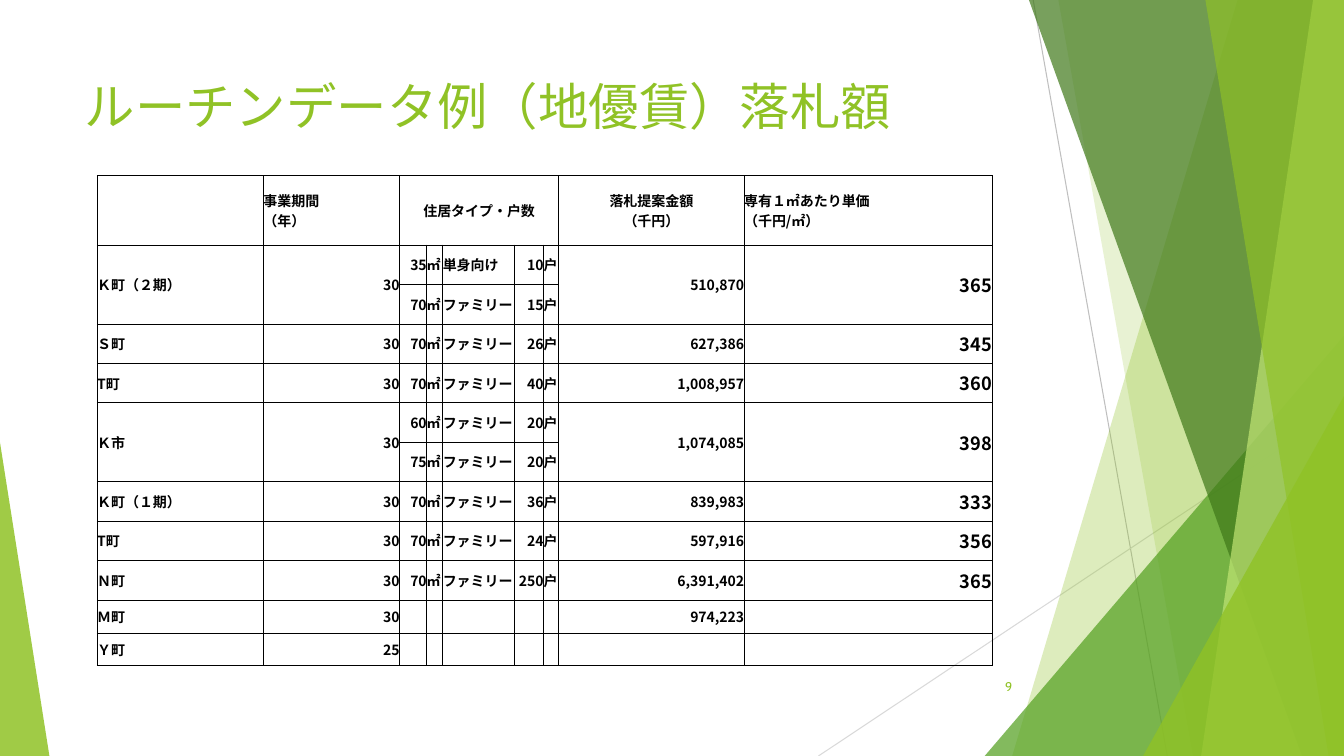
from dataclasses import dataclass

from lxml.etree import SubElement
from pptx import Presentation
from pptx.dml.color import RGBColor
from pptx.enum.shapes import MSO_CONNECTOR, MSO_SHAPE
from pptx.enum.text import MSO_ANCHOR, MSO_AUTO_SIZE, PP_ALIGN
from pptx.oxml.ns import qn
from pptx.util import Pt

W, H = 960, 540
GREEN = "90C226"
BLACK = "000000"
LATIN, CJK = "Cabin", "Noto Sans CJK JP"
LEFT, CENTER, RIGHT = PP_ALIGN.LEFT, PP_ALIGN.CENTER, PP_ALIGN.RIGHT


@dataclass
class Ray:
    x1: float
    y1: float
    x2: float
    y2: float
    color: str


@dataclass
class Band:
    top_x: float
    bottom_x: float
    color: str
    alpha: int


@dataclass
class Corner:
    x: float
    y: float
    width: float
    apex: float
    color: str
    alpha: int


@dataclass
class Units:
    area: str = ""
    kind: str = ""
    count: str = ""

    def texts(self) -> list[str]:
        if not self.area:
            return [""] * 5
        return [self.area, "㎡", self.kind, self.count, "戸"]


@dataclass
class Project:
    town: str
    years: str
    units: list[Units]
    price: str = ""
    rate: str = ""


RAYS = [Ray(738, 0, 833.8, H, "BFBFBF"), Ray(W, 290.2, 584.6, H, "D9D9D9")]
DECOR = [
    Band(884.2, 722.9, GREEN, 30),
    Band(756, 851.8, GREEN, 20),
    Corner(703.4, 239.8, 256.6, 1, "54A021", 72),
    Band(735.1, 929.5, "3F7819", 70),
    Band(938.2, 858.2, "C0E474", 70),
    Band(861.1, 949, GREEN, 65),
    Corner(816.5, 283, 143.5, 1, GREEN, 80),
    Corner(0, 316.1, 35.3, 0, GREEN, 85),
]
FAMILY = "ファミリー"
PROJECTS = [
    Project("Ｋ町（２期）", "30", [Units("35", "単身向け", "10"), Units("70", FAMILY, "15")],
            "510,870", "365"),
    Project("Ｓ町", "30", [Units("70", FAMILY, "26")], "627,386", "345"),
    Project("T町", "30", [Units("70", FAMILY, "40")], "1,008,957", "360"),
    Project("Ｋ市", "30", [Units("60", FAMILY, "20"), Units("75", FAMILY, "20")],
            "1,074,085", "398"),
    Project("Ｋ町（１期）", "30", [Units("70", FAMILY, "36")], "839,983", "333"),
    Project("T町", "30", [Units("70", FAMILY, "24")], "597,916", "356"),
    Project("Ｎ町", "30", [Units("70", FAMILY, "250")], "6,391,402", "365"),
    Project("Ｍ町", "30", [Units()], "974,223"),
    Project("Ｙ町", "25", [Units()]),
]
HEADERS = {
    1: ("事業期間\n（年）", LEFT),
    2: ("住居タイプ・戸数", CENTER),
    7: ("落札提案金額\n（千円）", CENTER),
    8: ("専有１㎡あたり単価\n（千円/㎡）", LEFT),
}
COLS = [118.8, 97.2, 19.4, 11.5, 51.1, 20.9, 10.8, 132.5, 177.1]
ROWS = [49.7] + [28.2] * 9 + [23.5] * 2
ALIGNS = [LEFT, RIGHT, RIGHT, LEFT, LEFT, RIGHT, LEFT, RIGHT, RIGHT]
RATE_COL = 8


def rgb(color: str) -> RGBColor:
    return RGBColor.from_string(color)


def write(p, text: str, size: float, color: str, name: str, align=LEFT, bold=False) -> None:
    p.text = text
    p.alignment = align
    f = p.font
    f.size, f.bold, f.name = Pt(size), bold, name
    f.color.rgb = rgb(color)
    SubElement(f._rPr, qn("a:ea"), typeface=CJK)
    if not text:
        SubElement(p._p, qn("a:endParaRPr"), sz=str(int(size * 100)))


def paint(sp, color: str, alpha: int) -> None:
    sp.shadow.inherit = False
    sp.line.fill.background()
    sp.fill.solid()
    sp.fill.fore_color.rgb = rgb(color)
    clr = sp.fill._xPr.find(qn("a:solidFill"))[0]
    SubElement(clr, qn("a:alpha"), val=str(alpha * 1000))


def draw_ray(s, ray: Ray) -> None:
    sp = s.shapes.add_connector(MSO_CONNECTOR.STRAIGHT,
                                Pt(ray.x1), Pt(ray.y1), Pt(ray.x2), Pt(ray.y2))
    sp.line.color.rgb = rgb(ray.color)
    sp.line.width = Pt(0.75)
    SubElement(sp._element.spPr, qn("a:effectLst"))


def draw_band(s, band: Band) -> None:
    fb = s.shapes.build_freeform(band.top_x, 0, scale=Pt(1))
    fb.add_line_segments([(W, 0), (W, H), (band.bottom_x, H)], close=True)
    paint(fb.convert_to_shape(), band.color, band.alpha)


def draw_corner(s, c: Corner) -> None:
    sp = s.shapes.add_shape(MSO_SHAPE.ISOSCELES_TRIANGLE,
                            Pt(c.x), Pt(c.y), Pt(c.width), Pt(H - c.y))
    sp.adjustments[0] = c.apex
    paint(sp, c.color, c.alpha)


def format_cell(cell, text: str, align, size: float) -> None:
    cell.margin_left = cell.margin_right = cell.margin_top = cell.margin_bottom = 0
    cell.vertical_anchor = MSO_ANCHOR.MIDDLE
    tcPr = cell._tc.get_or_add_tcPr()
    for side in ("lnL", "lnR", "lnT", "lnB"):
        ln = SubElement(tcPr, qn(f"a:{side}"), w=str(Pt(0.5)))
        SubElement(SubElement(ln, qn("a:solidFill")), qn("a:srgbClr"), val=BLACK)
    cell.fill.background()
    write(cell.text_frame.paragraphs[0], text, size, BLACK, CJK, align, True)


def draw_table(s) -> None:
    table = s.shapes.add_table(len(ROWS), len(COLS), Pt(69.4), Pt(125.3),
                               Pt(sum(COLS)), Pt(sum(ROWS))).table
    table.first_row = table.horz_banding = False
    for col, width in zip(table.columns, COLS):
        col.width = Pt(width)
    for row, height in zip(table.rows, ROWS):
        row.height = Pt(height)
    for i in range(len(COLS)):
        format_cell(table.cell(0, i), *HEADERS.get(i, ("", LEFT)), 10)
    table.cell(0, 2).merge(table.cell(0, 6))
    top = 1
    for project in PROJECTS:
        bottom = top + len(project.units) - 1
        for k, units in enumerate(project.units):
            texts = [project.town, project.years, *units.texts(), project.price, project.rate]
            for i, text in enumerate(texts):
                spanned = k > 0 and i in (0, 1, 7, 8)
                size = 13 if i == RATE_COL and text and not spanned else 10
                format_cell(table.cell(top + k, i), "" if spanned else text, ALIGNS[i], size)
        if bottom > top:
            for i in (0, 1, 7, 8):
                table.cell(top, i).merge(table.cell(bottom, i))
        top = bottom + 1


def main() -> None:
    prs = Presentation()
    prs.slide_width, prs.slide_height = Pt(W), Pt(H)
    s = prs.slides.add_slide(prs.slide_layouts[5])
    for ray in RAYS:
        draw_ray(s, ray)
    for item in DECOR:
        if isinstance(item, Band):
            draw_band(s, item)
        else:
            draw_corner(s, item)
    title = s.shapes.title
    title.left, title.top, title.width, title.height = Pt(53.3), Pt(48.2), Pt(676.8), Pt(54)
    title.text_frame.auto_size = MSO_AUTO_SIZE.NONE
    title.text_frame.vertical_anchor = MSO_ANCHOR.MIDDLE
    write(title.text_frame.paragraphs[0], "ルーチンデータ例（地優賃）落札額", 36, GREEN, LATIN)
    number = s.shapes.add_textbox(Pt(676.1), Pt(475.9), Pt(54), Pt(28.8))
    number.text_frame.word_wrap = True
    number.text_frame.vertical_anchor = MSO_ANCHOR.MIDDLE
    write(number.text_frame.paragraphs[0], "9", 9, GREEN, LATIN, RIGHT)
    draw_table(s)
    prs.save("out.pptx")


if __name__ == "__main__":
    main()
